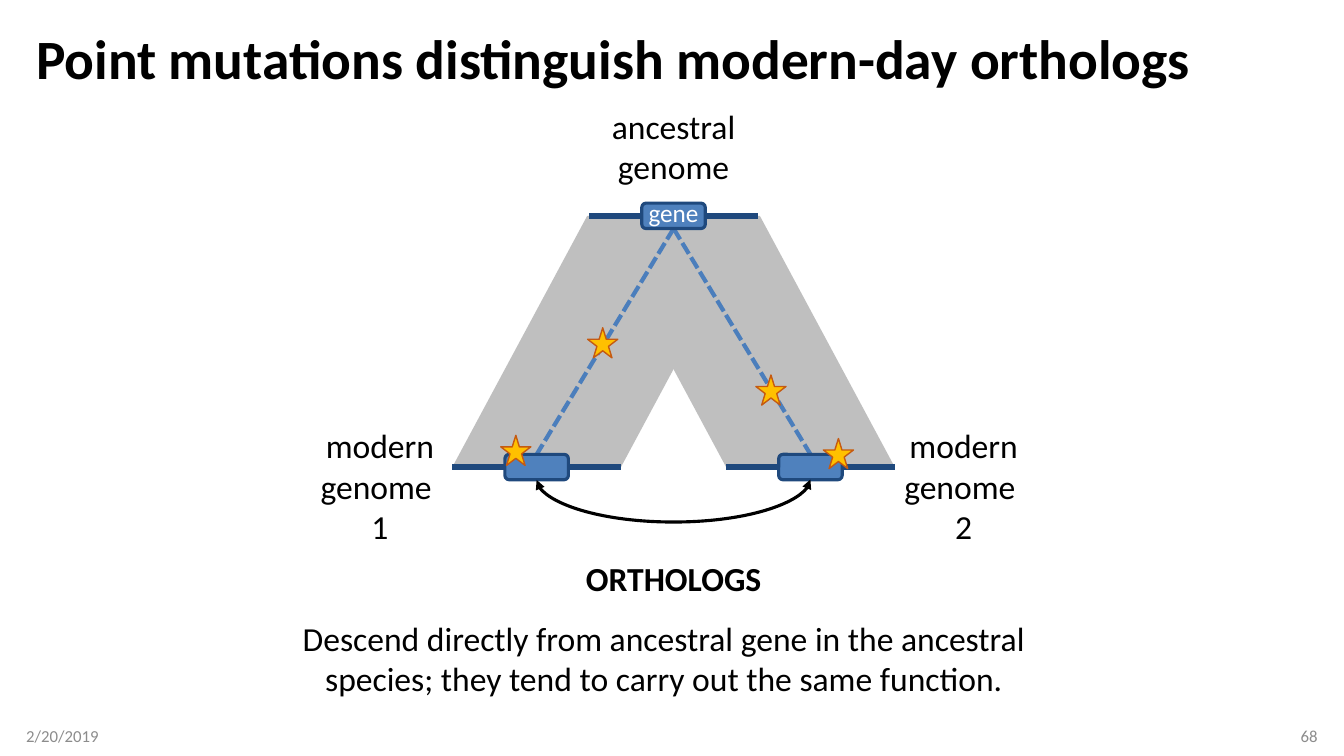
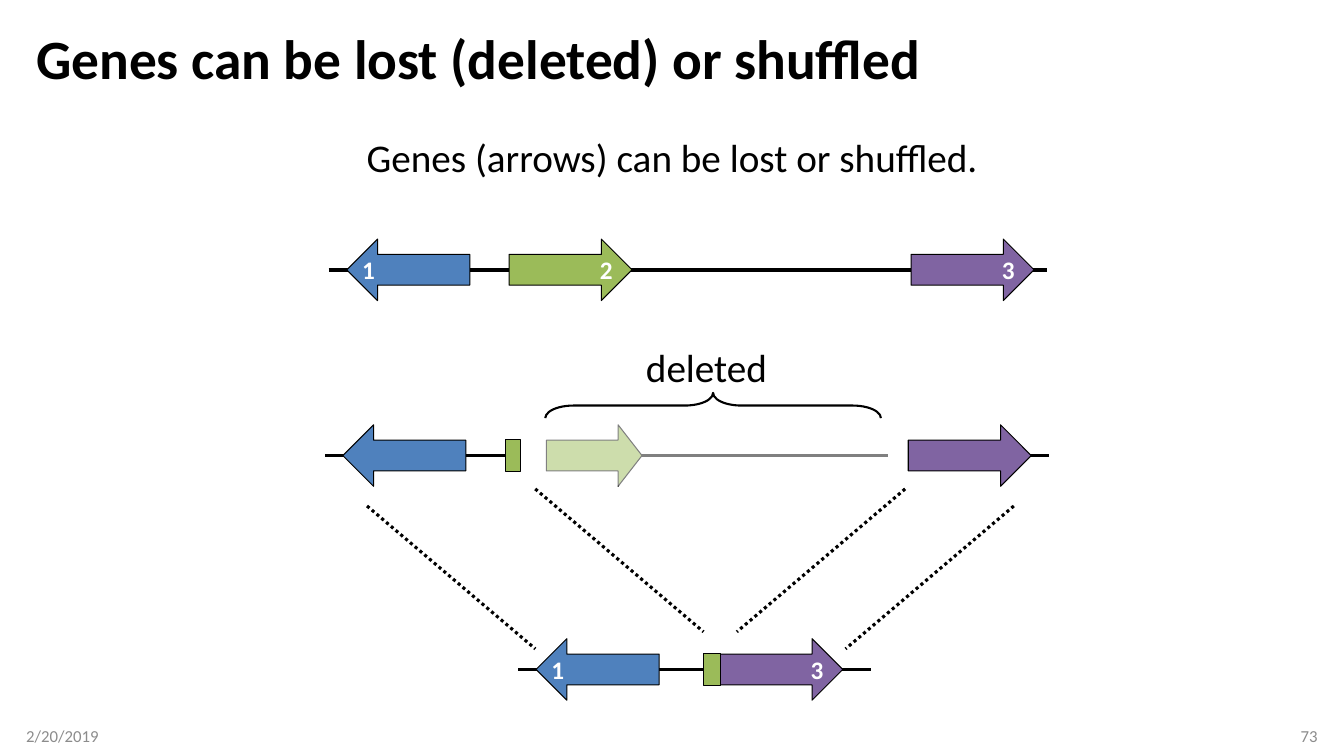
from lxml import etree
from pptx import Presentation
from pptx.dml.color import RGBColor
from pptx.enum.dml import MSO_LINE
from pptx.enum.shapes import MSO_CONNECTOR, MSO_SHAPE
from pptx.enum.text import MSO_ANCHOR, MSO_AUTO_SIZE, PP_ALIGN
from pptx.oxml.ns import qn
from pptx.util import Cm, Pt

COLORS = {
    "black": "000000", "white": "FFFFFF", "footer": "8C8C8C",
    "descent": "BFBFBF", "genome": "1F497D", "lineage": "4B7EBC",
    "blue": "4F81BD", "green": "9BBB59", "violet": "8064A2",
    "star": "FFC000", "star edge": "C55A11",
}
FONT = "Calibri"
LEFT, CENTER, RIGHT = PP_ALIGN.LEFT, PP_ALIGN.CENTER, PP_ALIGN.RIGHT
MIDDLE, TOP = MSO_ANCHOR.MIDDLE, MSO_ANCHOR.TOP
DASH, DOT = MSO_LINE.SQUARE_DOT, MSO_LINE.ROUND_DOT
STRAIGHT, CURVE = MSO_CONNECTOR.STRAIGHT, MSO_CONNECTOR.CURVE
BOTTOM_SITE = 2
SLIDE_W, SLIDE_H = 33.87, 19.05
MARGIN = 0.66
GENE_W, GENE_H = 3.1, 1.55


def rgb(name):
    return RGBColor.from_string(COLORS[name])


def write(frame, text, size=24, color="black", bold=False, align=CENTER,
          anchor=TOP, insets=(0.25, 0.13, 0.25, 0.13), spacing=None):
    frame.word_wrap = True
    frame.auto_size = MSO_AUTO_SIZE.NONE
    frame.vertical_anchor = anchor
    (frame.margin_left, frame.margin_top,
     frame.margin_right, frame.margin_bottom) = map(Cm, insets)
    frame.text = text
    for paragraph in frame.paragraphs:
        paragraph.alignment = align
        if spacing:
            paragraph.line_spacing = spacing
        font = paragraph.font
        font.name, font.size, font.bold = FONT, Pt(size), bold
        font.color.rgb = rgb(color)


def label(slide, text, left, top, width, height, **style):
    area = slide.shapes.add_textbox(Cm(left), Cm(top), Cm(width), Cm(height))
    write(area.text_frame, text, **style)


def draw(slide, kind, left, top, width, height, fill=None, edge=None, weight=0.75):
    figure = slide.shapes.add_shape(kind, Cm(left), Cm(top), Cm(width), Cm(height))
    figure.shadow.inherit = False
    if fill:
        figure.fill.solid()
        figure.fill.fore_color.rgb = rgb(fill)
    else:
        figure.fill.background()
    if edge:
        figure.line.color.rgb = rgb(edge)
        figure.line.width = Pt(weight)
    else:
        figure.line.fill.background()
    return figure


def link(slide, x1, y1, x2, y2, color="black", weight=2.5, dash=None, kind=STRAIGHT):
    stroke = slide.shapes.add_connector(kind, Cm(x1), Cm(y1), Cm(x2), Cm(y2))
    stroke.line.color.rgb = rgb(color)
    stroke.line.width = Pt(weight)
    if dash:
        stroke.line.dash_style = dash
    etree.SubElement(stroke.element.spPr, qn("a:effectLst"))
    return stroke


def bow(slide, start_gene, end_gene, depth):
    thin = Cm(0.01)
    stroke = link(slide, 0, 0, 1, 1, weight=2.25, kind=CURVE)
    stroke.begin_connect(start_gene, BOTTOM_SITE)
    stroke.end_connect(end_gene, BOTTOM_SITE)
    span = end_gene.left - start_gene.left
    middle = start_gene.left + (span + start_gene.width) // 2
    base = start_gene.top + start_gene.height
    stroke.left, stroke.top = middle - thin // 2, base - span // 2
    stroke.width, stroke.height = thin, span
    properties = stroke.element.spPr
    frame = properties.find(qn("a:xfrm"))
    frame.set("rot", "16200000")
    frame.set("flipH", "1")
    guides = properties.find(qn("a:prstGeom")).get_or_add_avLst()
    etree.SubElement(guides, qn("a:gd"), name="adj1",
                     fmla=f"val {round(Cm(depth) / thin * 100000)}")
    for end in ("a:headEnd", "a:tailEnd"):
        etree.SubElement(properties.find(qn("a:ln")), qn(end), type="triangle")


def start_slide(deck, title, number):
    slide = deck.slides.add_slide(deck.slide_layouts[5])
    heading = slide.shapes.title
    heading.left, heading.top = Cm(MARGIN), Cm(0.64)
    heading.width, heading.height = Cm(SLIDE_W - 2 * MARGIN), Cm(1.83)
    write(heading.text_frame, title, size=39.6, bold=True, align=LEFT,
          anchor=MIDDLE, spacing=0.9)
    footer = {"size": 12, "color": "footer", "anchor": MIDDLE}
    label(slide, "2/20/2019", MARGIN, 18.03, 7.62, 1.02, align=LEFT,
          insets=(0, 0.13, 0.25, 0.13), **footer)
    label(slide, number, SLIDE_W - MARGIN - 7.62, 18.03, 7.62, 1.02, align=RIGHT,
          insets=(0.25, 0.13, 0, 0.13), **footer)
    return slide


def ortholog_tree(slide, left, top, width, height):
    bar, band = 4.25, 7.65
    center, bottom = left + width / 2, top + height
    for band_left, mirrored in ((left + width - band, True), (left, False)):
        descent = draw(slide, MSO_SHAPE.PARALLELOGRAM, band_left, top, band, height,
                       "descent")
        descent.adjustments[0] = (band - bar) / height
        if mirrored:
            descent.element.spPr.find(qn("a:xfrm")).set("flipH", "1")

    modern = (left + bar / 2, left + width - bar / 2)
    loci = [(modern[0], bottom), (modern[1], bottom), (center, top)]
    for x, y in loci:
        link(slide, x - bar / 2, y, x + bar / 2, y, "genome", 4.5)
    gene_w, gene_h = 1.6, 0.64
    for x in modern:
        link(slide, center, top + gene_h / 2, x, bottom - gene_h / 2,
             "lineage", 3, DASH)
    genes = [draw(slide, MSO_SHAPE.FLOWCHART_ALTERNATE_PROCESS, x - gene_w / 2,
                  y - gene_h / 2, gene_w, gene_h, "blue", "genome", 2.25)
             for x, y in loci]
    write(genes[2].text_frame, "gene", size=18, color="white", anchor=MIDDLE,
          insets=(0, 0, 0, 0.15))
    bow(slide, genes[0], genes[1], 1.07)

    caption = 6.05
    label(slide, "ancestral\ngenome", center - caption / 2, top - 2.9, caption, 2.3)
    label(slide, "ORTHOLOGS", center - caption / 2, top + 8.5, caption, 1.3, bold=True)
    for number, offset in (("1", -4.85), ("2", 9.86)):
        label(slide, f"modern\ngenome \n{number}", left + offset, top + 5.15,
              caption, 3.33)
    label(slide, "Descend directly from ancestral gene in the ancestral species; "
                 "they tend to carry out the same function.",
          center - 9.67, top + 10, 18.85, 2.31)
    for x, y in ((1.22, 5.53), (3.41, 2.82), (7.65, 4.01), (9.35, 5.61)):
        draw(slide, MSO_SHAPE.STAR_5_POINT, left + x, top + y, 0.76, 0.76,
             "star", "star edge", 1)


def genome(slide, left, axis, spans, genes, stub=None):
    for start, end in spans:
        link(slide, left + start, axis, left + end, axis)
    for offset, color, number, width in genes:
        backward = color == "blue"
        arrow = draw(slide, MSO_SHAPE.LEFT_ARROW if backward else MSO_SHAPE.RIGHT_ARROW,
                     left + offset, axis - GENE_H / 2, width, GENE_H, color, "black")
        arrow.adjustments[1] = 0.5 * width / GENE_W
        if number:
            write(arrow.text_frame, number, size=18, color="white", bold=True,
                  align=LEFT if backward else RIGHT, anchor=MIDDLE,
                  insets=(0, 0, 0.1, 0))
    if stub:
        offset, width = stub
        draw(slide, MSO_SHAPE.RECTANGLE, left + offset, axis - 0.4, width, 0.8,
             "green", "black")


def deletion_mark(slide, left, top, width):
    depth = 0.64
    brace = draw(slide, MSO_SHAPE.LEFT_BRACE, left + (width - depth) / 2,
                 top + (depth - width) / 2, depth, width, edge="black", weight=1.5)
    brace.rotation = 90
    brace.adjustments[0] = 1.11
    label(slide, "deleted", left + width / 2 - 1.94, top - 1.39, 3.76, 1.45,
          size=28, align=LEFT)


def veil(slide, left, top, width, height):
    cover = draw(slide, MSO_SHAPE.RECTANGLE, left, top, width, height, "white")
    tint = cover.element.spPr.find(qn("a:solidFill"))[0]
    etree.SubElement(tint, qn("a:alpha"), val="50000")


def gene_loss(slide, left, top):
    label(slide, "Genes (arrows) can be lost or shuffled.", left - 2.29, top,
          21.89, 1.45, size=28)
    genome(slide, left, top + 3.57, [(0, 18.11)],
           [(4.55, "green", "2", GENE_W), (14.68, "violet", "3", GENE_W),
            (0.46, "blue", "1", GENE_W)])
    genome(slide, left - 0.08, top + 8.25, [(0, 4.83), (14.81, 18.24), (5.57, 14.18)],
           [(0.44, "blue", "", GENE_W), (14.69, "violet", "", GENE_W),
            (5.57, "green", "", 2.41)], (4.55, 0.36))
    genome(slide, left + 4.78, top + 13.64, [(0, 8.89)],
           [(0.45, "blue", "1", GENE_W), (5.08, "violet", "3", GENE_W)], (4.67, 0.43))
    for x, y, run in ((0.97, 9.52, 4.24), (5.21, 9.09, 4.24),
                      (14.53, 9.09, -4.24), (17.27, 9.52, -4.24)):
        link(slide, left + x, top + y, left + x + run, top + y + 3.6,
             weight=2.25, dash=DOT)
    deletion_mark(slide, left + 5.46, top + 6.67, 8.46)
    veil(slide, left + 5.21, top + 7.31, 9.09, 1.7)


def main():
    deck = Presentation()
    deck.slide_width, deck.slide_height = Cm(SLIDE_W), Cm(SLIDE_H)
    orthologs = start_slide(
        deck, "Point mutations distinguish modern-day orthologs", "68")
    ortholog_tree(orthologs, 11.4, 5.44, 11.15, 6.33)
    losses = start_slide(deck, "Genes can be lost (deleted) or shuffled", "73")
    gene_loss(losses, 8.28, 3.23)
    deck.save("out.pptx")


if __name__ == "__main__":
    main()
